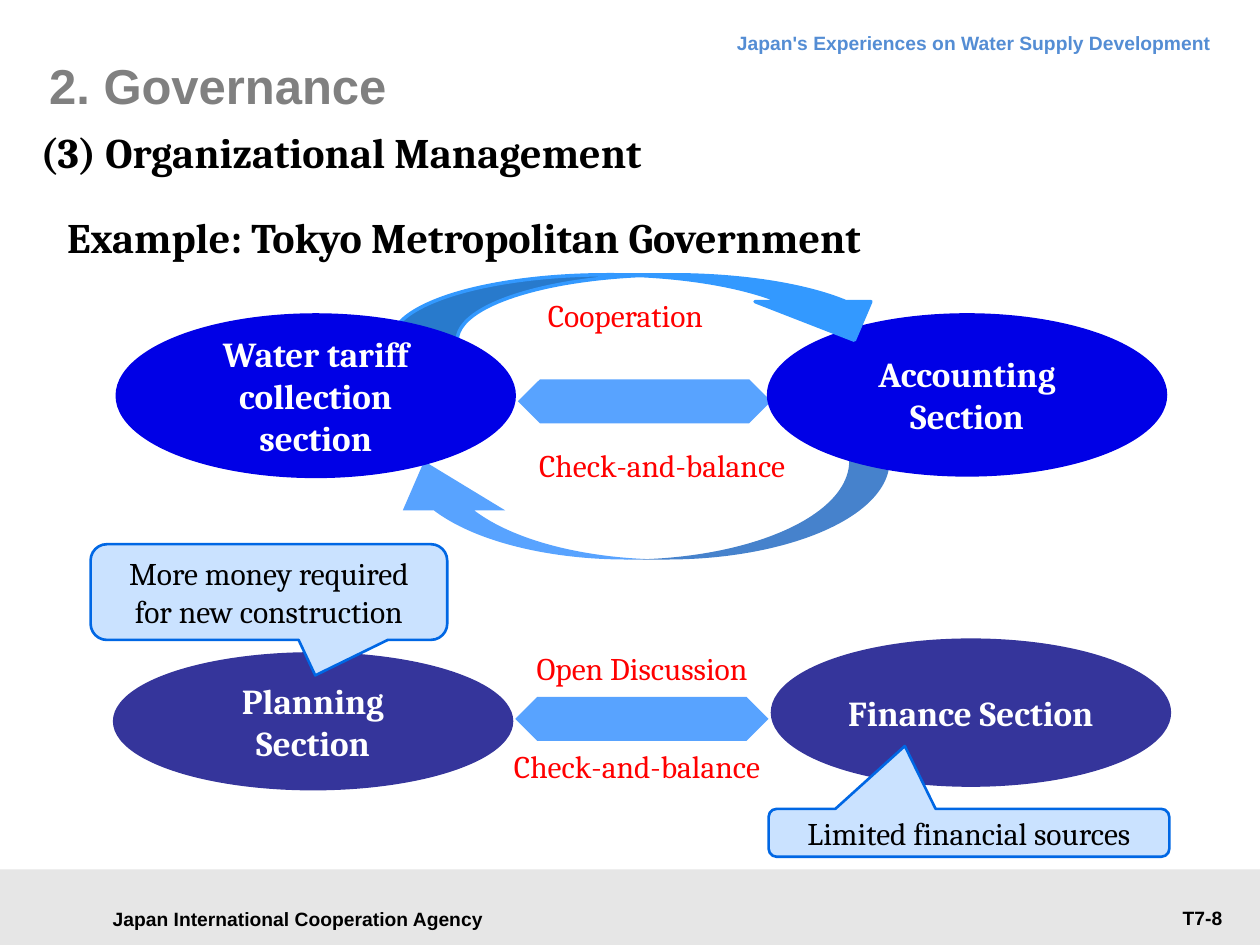
from dataclasses import dataclass
from typing import Optional

from pptx import Presentation
from pptx.dml.color import RGBColor
from pptx.enum.shapes import MSO_SHAPE as Shape
from pptx.enum.text import MSO_ANCHOR as Anchor, PP_ALIGN as Align
from pptx.util import Pt

BLACK = RGBColor(0x00, 0x00, 0x00)
WHITE = RGBColor(0xFF, 0xFF, 0xFF)
RED = RGBColor(0xFF, 0x00, 0x00)
GREY = RGBColor(0x80, 0x80, 0x80)
FOOTER_GREY = RGBColor(0xE6, 0xE6, 0xE6)
HEADER_BLUE = RGBColor(0x54, 0x8D, 0xD4)
BLUE = RGBColor(0x00, 0x00, 0xE6)
INDIGO = RGBColor(0x35, 0x35, 0x9B)
ARROW_BLUE = RGBColor(0x58, 0xA3, 0xFF)
CURVE_BLUE = RGBColor(0x33, 0x99, 0xFF)
PALE_BLUE = RGBColor(0xCA, 0xE2, 0xFF)
CALLOUT_LINE = RGBColor(0x00, 0x67, 0xE4)


@dataclass(frozen=True)
class Box:
    left: float
    top: float
    width: float
    height: float

    def lengths(self) -> tuple:
        return Pt(self.left), Pt(self.top), Pt(self.width), Pt(self.height)


@dataclass(frozen=True)
class Style:
    size: float
    color: RGBColor
    bold: bool = False
    font: str = "Cambria"
    align: Align = Align.LEFT
    anchor: Anchor = Anchor.TOP
    spacing: Optional[float] = None
    indent: float = 0


TITLE = Style(28, GREY, True, "Arial", anchor=Anchor.MIDDLE)
HEADER = Style(11, HEADER_BLUE, True, "Arial", Align.RIGHT, spacing=18)
AGENCY = Style(11, BLACK, True, "Arial", Align.CENTER, Anchor.MIDDLE)
PAGE = Style(11, BLACK, True, "Arial", Align.RIGHT)
HEADING = Style(24, BLACK, True, spacing=32, indent=4.5)
SECTION = Style(20, WHITE, True, align=Align.CENTER, anchor=Anchor.MIDDLE)
CALLOUT = Style(18, BLACK, align=Align.CENTER, anchor=Anchor.MIDDLE)
LABEL = Style(18, RED)
LABEL_CENTERED = Style(18, RED, align=Align.CENTER)


def write(sp, text: str, style: Style, insets: Optional[tuple] = None) -> None:
    tf = sp.text_frame
    tf.word_wrap = True
    tf.vertical_anchor = style.anchor
    if insets:
        tf.margin_left, tf.margin_top, tf.margin_right, tf.margin_bottom = map(Pt, insets)
    p = tf.paragraphs[0]
    p.alignment = style.align
    if style.spacing:
        p.line_spacing = Pt(style.spacing)
    if style.indent:
        pPr = p._p.get_or_add_pPr()
        pPr.set("marL", str(Pt(style.indent)))
        pPr.set("indent", "0")
    r = p.add_run()
    r.text = text
    r.font.name = style.font
    r.font.size = Pt(style.size)
    r.font.bold = style.bold
    r.font.color.rgb = style.color


def add_text(s, box: Box, text: str, style: Style, insets: Optional[tuple] = None) -> None:
    write(s.shapes.add_textbox(*box.lengths()), text, style, insets)


def add_shape(s, kind: Shape, box: Box, fill: RGBColor, line: Optional[RGBColor] = None,
              weight: float = 2, adjust: tuple = (), rotation: float = 0):
    sp = s.shapes.add_shape(kind, *box.lengths())
    sp.shadow.inherit = False
    sp.rotation = rotation
    for i, value in enumerate(adjust):
        sp.adjustments[i] = value
    sp.fill.solid()
    sp.fill.fore_color.rgb = fill
    if line is None:
        sp.line.fill.background()
    else:
        sp.line.color.rgb = line
        sp.line.width = Pt(weight)
    return sp


def add_section(s, left: float, top: float, height: float, color: RGBColor, text: str) -> None:
    sp = add_shape(s, Shape.OVAL, Box(left, top, 226.8, height), color, color)
    write(sp, text, SECTION)


def add_two_way_arrow(s, left: float, top: float) -> None:
    add_shape(s, Shape.UP_DOWN_ARROW, Box(left, top, 25.2, 144.7), ARROW_BLUE,
              adjust=(0.31, 1.07), rotation=90)


def add_callout(s, box: Box, tip: tuple, text: str) -> None:
    sp = add_shape(s, Shape.ROUNDED_RECTANGULAR_CALLOUT, box, PALE_BLUE, CALLOUT_LINE,
                   1.5, (*tip, 0.17))
    write(sp, text, CALLOUT)


def main() -> None:
    prs = Presentation()
    prs.slide_width, prs.slide_height = Pt(720), Pt(540)
    s = prs.slides.add_slide(prs.slide_layouts[5])

    add_shape(s, Shape.RECTANGLE, Box(0, 496.8, 720, 43.2), FOOTER_GREY)
    add_text(s, Box(51.1, 512.6, 238.3, 24.5), "Japan International Cooperation Agency", AGENCY)
    add_text(s, Box(195.8, 9.4, 503.3, 27.4),
             "Japan's Experiences on Water Supply Development", HEADER)
    add_text(s, Box(592.6, 514.1, 113, 20.9), "T7-8", PAGE)

    title = s.shapes.title
    title.left, title.top, title.width, title.height = Box(28.1, 20.2, 646.6, 56.9).lengths()
    write(title, "2. Governance", TITLE, (0, 0, 0, 0))

    add_section(s, 65.5, 373.7, 77, INDIGO, "Planning Section")
    add_section(s, 441.4, 365.8, 82.8, INDIGO, "Finance Section")
    add_two_way_arrow(s, 355.7, 157)
    add_text(s, Box(265, 251.3, 226.8, 28.8), "Check-and-balance", LABEL_CENTERED)
    add_text(s, Box(306, 165.6, 124.6, 28.8), "Cooperation", LABEL)
    add_shape(s, Shape.CURVED_LEFT_ARROW, Box(332.6, 144, 56.2, 295.2), ARROW_BLUE,
              adjust=(0.41, 1.04, 0.5), rotation=90)
    add_callout(s, Box(51.8, 311, 203.8, 54.7), (0.13, 0.87),
                "More money required for new construction")
    add_callout(s, Box(439.2, 462.2, 229, 27.4), (-0.16, -1.81), "Limited financial sources")
    add_text(s, Box(286.6, 423.4, 162, 28.8), "Check-and-balance", LABEL)
    add_text(s, Box(299.5, 367.2, 142.6, 28.8), "Open Discussion", LABEL)
    add_text(s, Box(31, 117.4, 668.9, 29.5), "Example: Tokyo Metropolitan Government",
             HEADING, (2.9, 0, 0, 0))
    add_section(s, 439.2, 180, 91.4, BLUE, "Accounting Section")
    add_two_way_arrow(s, 354.2, 338.4)
    add_text(s, Box(15.8, 69.1, 362.2, 32.4), "(3) Organizational Management",
             HEADING, (2.9, 0, 0, 0))
    add_shape(s, Shape.CURVED_DOWN_ARROW, Box(223.9, 157, 297.4, 37.4), CURVE_BLUE, CURVE_BLUE,
              adjust=(1.77, 1.77, 0.59))
    add_section(s, 67, 180, 92.2, BLUE, "Water tariff collection section")

    prs.save("out.pptx")


if __name__ == "__main__":
    main()
